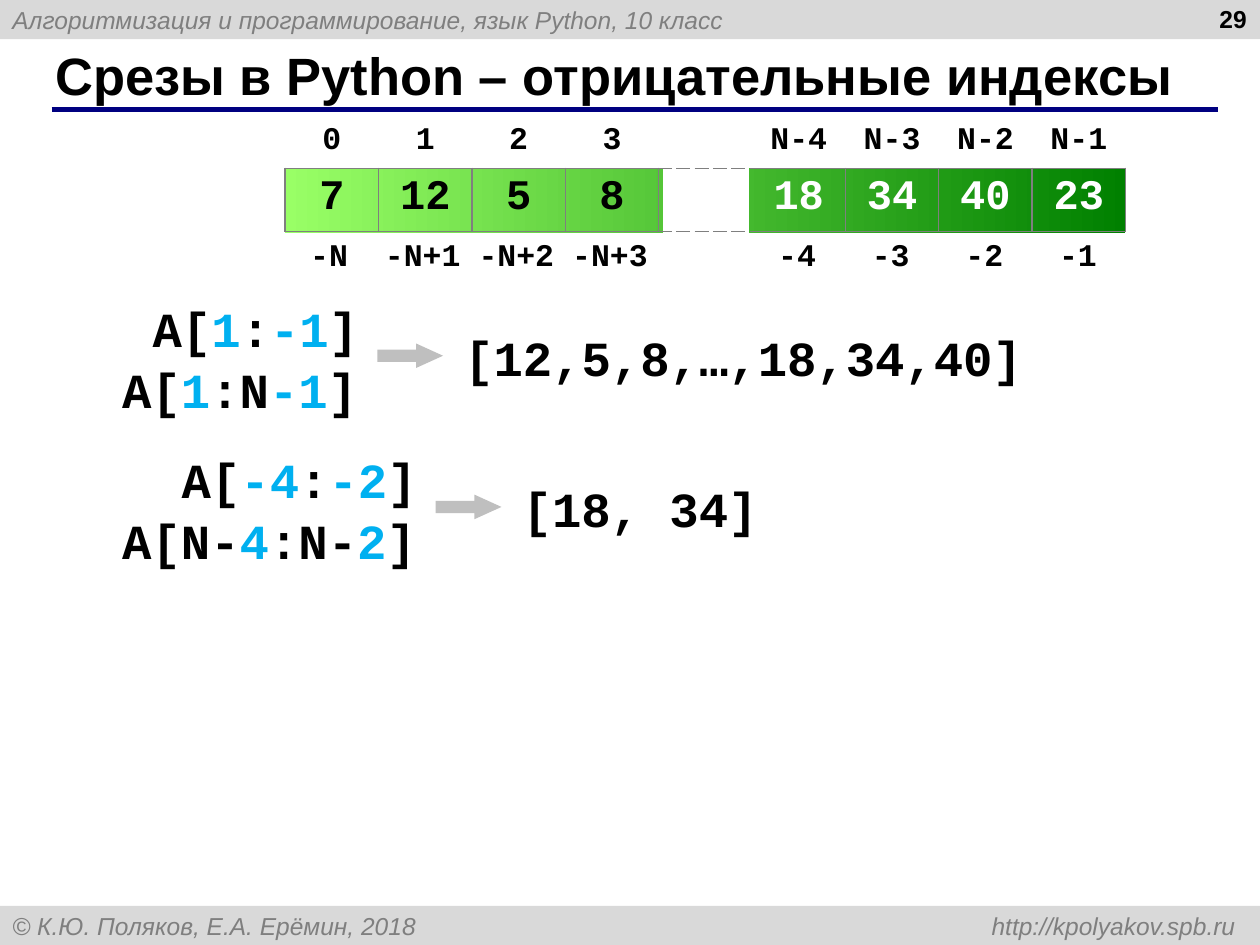
from lxml import etree
from pptx import Presentation, util as u
from pptx.dml.color import RGBColor
from pptx.enum import shapes, text
from pptx.oxml.ns import qn

Pt = u.Pt
COLORS = {"black": "000000", "white": "FFFFFF", "band": "D9D9D9", "muted": "7F7F7F",
          "navy": "000080", "light": "99FF66", "dark": "008000",
          "index": "00B0F0", "arrow": "BFBFBF"}

HEADER = "Алгоритмизация и программирование, язык Python, 10 класс"
FOOTER = "© К.Ю. Поляков, Е.А. Ерёмин, 2018 \thttp://kpolyakov.spb.ru"
TITLE = "Срезы в Python – отрицательные индексы"
PAGE = "29"

INDEXES = ["0", "1", "2", "3", "", "N-4", "N-3", "N-2", "N-1"]
VALUES = ["7", "12", "5", "8", "", "18", "34", "40", "23"]
NEGATIVE = ["-N", "-N+1", "-N+2", "-N+3", "", "-4", "-3", "-2", "-1"]
GAP = VALUES.index("")

# Each slice: alternating black and blue pieces
EXAMPLES = [
    {"top": 167, "right": 219.6, "result": "[12,5,8,…,18,34,40]",
     "slices": [(63.4, [" A[", "1", ":", "-1", "]"]),
                (46, [" A[", "1", ":N", "-1", "]"])]},
    {"top": 253.4, "right": 253, "result": "[18, 34]",
     "slices": [(80, [" A[", "-4", ":", "-2", "]"]),
                (46, [" A[N-", "4", ":N-", "2", "]"])]},
]

ARRAY_LEFT, ARRAY_TOP, COLUMN = 163, 67, 53.35
INDEX_HEIGHT, VALUE_HEIGHT = 29.2, 34.5
LINE_HEIGHT = 41

SMALL = {"name": "Arial", "size": Pt(14), "italic": True, "bold": False}
BOLD = {"name": "Arial", "size": Pt(14), "bold": True}
CODE = {"name": "Courier New", "size": Pt(28), "bold": True}


def color(name):
    return RGBColor.from_string(COLORS[name])


def add_run(paragraph, content, formats, color_name="black"):
    run = paragraph.add_run()
    run.text = content
    for name, value in formats.items():
        setattr(run.font, name, value)
    run.font.color.rgb = color(color_name)


def add_block(slide, kind, box, fill):
    """Add a borderless shape; fill is a colour name, or a pair for a gradient."""
    shape = slide.shapes.add_shape(kind, *map(Pt, box))
    shape.shadow.inherit = False
    shape.line.fill.background()
    if isinstance(fill, tuple):
        shape.fill.gradient()
        shape.fill.gradient_angle = 0
        for stop, name in zip(shape.fill.gradient_stops, fill):
            stop.color.rgb = color(name)
    else:
        shape.fill.solid()
        shape.fill.fore_color.rgb = color(fill)
    return shape


def add_band(slide, top, content):
    band = add_block(slide, shapes.MSO_SHAPE.RECTANGLE, (0, top, 720, 22.4), "band")
    band.text_frame.vertical_anchor = text.MSO_ANCHOR.MIDDLE
    paragraph = band.text_frame.paragraphs[0]
    paragraph.alignment = text.PP_ALIGN.LEFT
    add_run(paragraph, content, SMALL, "muted")
    return paragraph


def add_right_tab(paragraph, position):
    properties = paragraph._p.get_or_add_pPr()
    tabs = etree.SubElement(properties, qn("a:tabLst"))
    etree.SubElement(tabs, qn("a:tab"), pos=str(Pt(position)), algn="r")


def set_borders(cell, sides, dashed):
    properties = cell._tc.get_or_add_tcPr()
    for position, side in enumerate(sides):
        line = etree.Element(qn("a:ln" + side), w=str(Pt(1)))
        fill = etree.SubElement(line, qn("a:solidFill"))
        etree.SubElement(fill, qn("a:srgbClr"), val=COLORS["muted"])
        if dashed:
            etree.SubElement(line, qn("a:prstDash"), val="sysDash")
        properties.insert(position, line)


def add_table(slide, left, top, column, rows):
    """Add a plain table; each row is (height, font size, side inset, words)."""
    count = len(rows[0][3])
    height = sum(row[0] for row in rows)
    frame = slide.shapes.add_table(len(rows), count, Pt(left), Pt(top),
                                   Pt(column * count), Pt(height))
    table = frame.table
    table.first_row = table.horz_banding = False
    style = frame._element.find(".//" + qn("a:tableStyleId"))
    style.text = "{2D5ABB26-0587-4C30-8999-92F81FD0307C}"
    for table_column in table.columns:
        table_column.width = Pt(column)
    for r, (row_height, size, inset, words) in enumerate(rows):
        table.rows[r].height = Pt(row_height)
        for c, word in enumerate(words):
            cell = table.cell(r, c)
            cell.fill.background()
            cell.margin_left = cell.margin_right = Pt(inset)
            if word:
                paragraph = cell.text_frame.paragraphs[0]
                paragraph.alignment = text.PP_ALIGN.CENTER
                white = size > 18 and c > GAP
                add_run(paragraph, word, CODE | {"size": Pt(size)},
                        "white" if white else "black")
    return table


def add_code(slide, left, top, width, pieces):
    box = slide.shapes.add_textbox(Pt(left), Pt(top), Pt(width), Pt(LINE_HEIGHT))
    frame = box.text_frame
    frame.word_wrap = False
    frame.auto_size = text.MSO_AUTO_SIZE.SHAPE_TO_FIT_TEXT
    for number, piece in enumerate(pieces):
        add_run(frame.paragraphs[0], piece, CODE, "index" if number % 2 else "black")


def add_frame(slide):
    add_band(slide, 0, HEADER)
    add_right_tab(add_band(slide, 517.6, FOOTER), 699)
    rule = slide.shapes.add_connector(shapes.MSO_CONNECTOR.STRAIGHT,
                                      Pt(29.5), Pt(62.6), Pt(696), Pt(62.6))
    rule.line.color.rgb = color("navy")
    rule.line.width = Pt(3)
    etree.SubElement(rule._element.spPr, qn("a:effectLst"))

    title = slide.shapes.title
    title_box = {"left": 24.5, "top": 24, "width": 682, "height": 37.4}
    for name, value in title_box.items():
        setattr(title, name, Pt(value))
    title.text_frame.vertical_anchor = text.MSO_ANCHOR.MIDDLE
    paragraph = title.text_frame.paragraphs[0]
    paragraph.alignment = text.PP_ALIGN.LEFT
    add_run(paragraph, TITLE, BOLD | {"size": Pt(30)})

    page = slide.shapes.add_textbox(Pt(551.5), Pt(-1.5), Pt(168), Pt(37.4))
    page.text_frame.word_wrap = True
    paragraph = page.text_frame.paragraphs[0]
    paragraph.alignment = text.PP_ALIGN.RIGHT
    add_run(paragraph, PAGE, BOLD)


def add_array(slide):
    top = ARRAY_TOP + INDEX_HEIGHT
    add_block(slide, shapes.MSO_SHAPE.RECTANGLE,
              (ARRAY_LEFT, top, COLUMN * len(VALUES), 36.7), ("light", "dark"))
    add_block(slide, shapes.MSO_SHAPE.FLOWCHART_PROCESS, (379, top, 49, 36.7), "white")
    table = add_table(slide, ARRAY_LEFT, ARRAY_TOP, COLUMN,
                      [(INDEX_HEIGHT, 18, 7.2, INDEXES),
                       (VALUE_HEIGHT, 24, 7.2, VALUES)])
    open_sides = {GAP - 1: "LTB", GAP: "TB", GAP + 1: "RTB"}
    for c in range(len(VALUES)):
        set_borders(table.cell(0, c), "B", c == GAP)
        set_borders(table.cell(1, c), open_sides.get(c, "LRTB"), c == GAP)
    add_table(slide, 161.3, 133.7, 53.5, [(29.2, 18, 0, NEGATIVE)])


def add_example(slide, example):
    top, right = example["top"], example["right"]
    for number, (left, pieces) in enumerate(example["slices"]):
        add_code(slide, left, top + number * 35, right - left, pieces)
    arrow = add_block(slide, shapes.MSO_SHAPE.RIGHT_ARROW,
                      (right - 4, top + 29.3, 37.6, 14), "arrow")
    arrow.adjustments[1] = 1.1
    result = example["result"]
    add_code(slide, right + 38.6, top + 16.6, 16.8 * len(result) + 22, [result])


def main():
    presentation = Presentation()
    presentation.slide_width, presentation.slide_height = Pt(720), Pt(540)
    slide = presentation.slides.add_slide(presentation.slide_layouts[5])
    add_frame(slide)
    add_array(slide)
    for example in EXAMPLES:
        add_example(slide, example)
    presentation.save("out.pptx")


if __name__ == "__main__":
    main()
